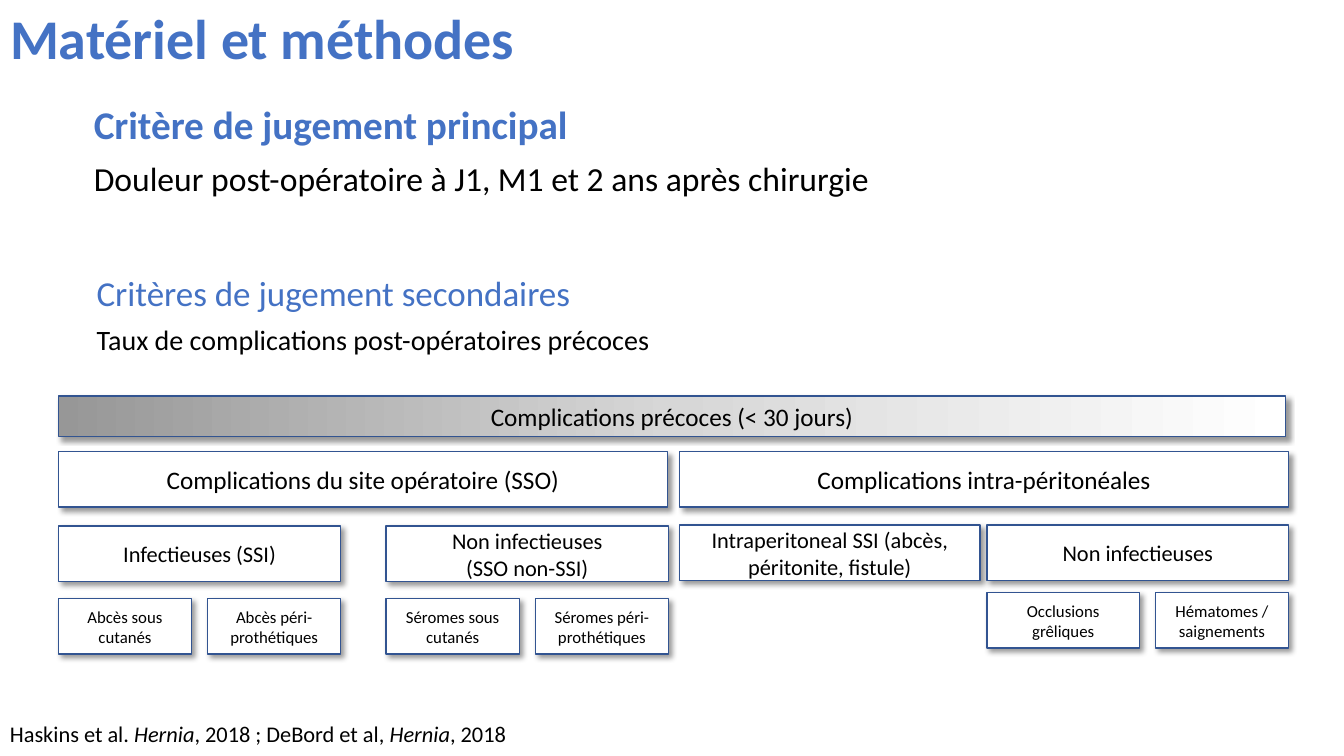
from dataclasses import dataclass

from lxml import etree
from pptx import Presentation
from pptx.dml.color import RGBColor
from pptx.enum.shapes import MSO_SHAPE
from pptx.enum.text import MSO_ANCHOR, MSO_AUTO_SIZE, PP_ALIGN
from pptx.oxml.ns import qn
from pptx.util import Emu, Pt

RECT = MSO_SHAPE.RECTANGLE
TOP, MIDDLE = MSO_ANCHOR.TOP, MSO_ANCHOR.MIDDLE
NO_FIT, GROW = MSO_AUTO_SIZE.NONE, MSO_AUTO_SIZE.SHAPE_TO_FIT_TEXT
LEFT, CENTER, JUSTIFY = PP_ALIGN.LEFT, PP_ALIGN.CENTER, PP_ALIGN.JUSTIFY
PX = 9144  # 100 px to the inch


@dataclass(frozen=True)
class Theme:
    font: str = "Calibri"
    accent: str = "4472C4"
    text: str = "000000"
    box: str = "FFFFFF"
    border: str = "325491"
    banner: tuple = ((0, "979797"), (50, "D7D7D7"), (100, "FFFFFF"))
    title: int = 40
    heading: int = 28
    subheading: int = 25
    lead: int = 24
    detail: int = 20
    group: int = 18
    small: int = 16
    leaf: int = 12


def px(*values):
    return [Emu(v * PX) for v in values]


def add_text(p, text, *, font, size, color, bold=False, italic=False):
    r = p.add_run()
    r.text = text
    f = r.font
    f.name, f.size, f.bold, f.italic = font, Pt(size), bold, italic
    f.color.rgb = RGBColor.from_string(color)


class Deck:
    def __init__(self, theme):
        self.theme = theme
        self.prs = Presentation()
        self.prs.slide_width, self.prs.slide_height = px(1333, 750)
        self.s = self.prs.slides.add_slide(self.prs.slide_layouts[1])

    def fill_text(self, tf, lines, align=LEFT, spacing=None, before=0):
        """Each line is a list of (text, format) runs."""
        for i, runs in enumerate(lines):
            p = tf.paragraphs[0] if i == 0 else tf.add_paragraph()
            p.alignment, p.line_spacing, p.space_before = align, spacing, Pt(before)
            for text, style in runs:
                add_text(p, text, **{"font": self.theme.font,
                                     "color": self.theme.text, **style})

    def placeholder(self, idx, at, lines, anchor, align, before=0):
        sp = self.s.placeholders[idx]
        sp.left, sp.top, sp.width, sp.height = px(*at)
        tf = sp.text_frame
        tf.auto_size, tf.vertical_anchor, tf.word_wrap = NO_FIT, anchor, True
        self.fill_text(tf, lines, align, 0.9, before)
        for p in tf.paragraphs:
            pPr = p._p.get_or_add_pPr()
            pPr.set("marL", "0")
            pPr.set("indent", "0")
            etree.SubElement(pPr, qn("a:buNone"))

    def label(self, at, runs):
        tf = self.s.shapes.add_textbox(*px(*at)).text_frame
        tf.word_wrap, tf.auto_size = False, GROW
        self.fill_text(tf, [runs])

    def box(self, at, text, size, gradient=None):
        sp = self.s.shapes.add_shape(RECT, *px(*at))
        if gradient:
            self.fill_gradient(sp, gradient)
        else:
            sp.fill.solid()
            sp.fill.fore_color.rgb = RGBColor.from_string(self.theme.box)
        sp.line.color.rgb = RGBColor.from_string(self.theme.border)
        sp.line.width = Pt(1)
        self.cast_shadow(sp)
        tf = sp.text_frame
        tf.word_wrap, tf.vertical_anchor = True, MIDDLE
        self.fill_text(tf, [[(t, {"size": size})] for t in text.split("\n")], CENTER)

    def fill_gradient(self, sp, stops):
        sp.fill.gradient()
        sp.fill.gradient_angle = 0
        gs_list = sp._element.spPr.find(".//" + qn("a:gsLst"))
        for gs in list(gs_list):
            gs_list.remove(gs)
        for pos, color in stops:
            gs = etree.SubElement(gs_list, qn("a:gs"), pos=str(pos * 1000))
            etree.SubElement(gs, qn("a:srgbClr"), val=color)

    def cast_shadow(self, sp):
        sp.shadow.inherit = False
        effects = sp._element.spPr.find(qn("a:effectLst"))
        shadow = etree.SubElement(
            effects, qn("a:outerShdw"), blurRad=str(Pt(4)), dist=str(Pt(3)),
            dir=str(45 * 60000), algn="tl", rotWithShape="0")
        color = etree.SubElement(shadow, qn("a:srgbClr"), val=self.theme.text)
        etree.SubElement(color, qn("a:alpha"), val="40000")


def main():
    t = Theme()
    deck = Deck(t)

    # Title and main criterion
    deck.placeholder(0, (0, 0, 1150, 83), [[("Matériel et méthodes", {
        "size": t.title, "color": t.accent, "bold": True})]], MIDDLE, LEFT)
    deck.placeholder(1, (83, 100, 1174, 469), [
        [("Critère de jugement principal", {
            "size": t.heading, "color": t.accent, "bold": True})],
        [("Douleur post-opératoire à J1, M1 et 2 ans après chirurgie",
          {"size": t.lead})],
    ], TOP, JUSTIFY, before=10)

    # Secondary criteria
    deck.label((86, 264, 509, 52), [("Critères de jugement secondaires", {
        "size": t.subheading, "color": t.accent})])
    deck.label((86, 315, 575, 44), [
        ("Taux de complications post-opératoires précoces", {"size": t.detail})])

    # Complication tree: banner and two groups
    deck.box((58, 393, 1217, 40), "Complications précoces (< 30 jours)",
             t.group, t.banner)
    row_h = 55
    for x, text in ((58, "Complications du site opératoire (SSO)"),
                    (674, "Complications intra-péritonéales")):
        deck.box((x, 448, 604, row_h), text, t.group)

    # Branches: left, top, width, text, top of leaves, leaves (offset, width, text)
    branches = (
        (58, 522, 280, "Infectieuses (SSI)", 594,
         ((0, 132, "Abcès sous cutanés"), (148, 132, "Abcès péri-prothétiques"))),
        (383, 522, 280, "Non infectieuses\n(SSO non-SSI)", 594,
         ((0, 132, "Séromes sous cutanés"), (148, 132, "Séromes péri-prothétiques"))),
        (674, 521, 298, "Intraperitoneal SSI (abcès, péritonite, fistule)", 588, ()),
        (979, 521, 299, "Non infectieuses", 588,
         ((0, 151, "Occlusions grêliques"), (167, 132, "Hématomes / saignements"))),
    )
    for x, y, w, text, leaf_y, leaves in branches:
        deck.box((x, y, w, row_h), text, t.small)
        for dx, leaf_w, leaf in leaves:
            deck.box((x + dx, leaf_y, leaf_w, row_h), leaf, t.leaf)

    # References
    plain = {"size": t.small}
    journal = {"size": t.small, "italic": True}
    deck.label((0, 710, 519, 37), [
        ("Haskins et al. ", plain), ("Hernia", journal),
        (", 2018 ; DeBord et al, ", plain), ("Hernia", journal), (", 2018", plain)])

    deck.prs.save("out.pptx")


if __name__ == "__main__":
    main()
